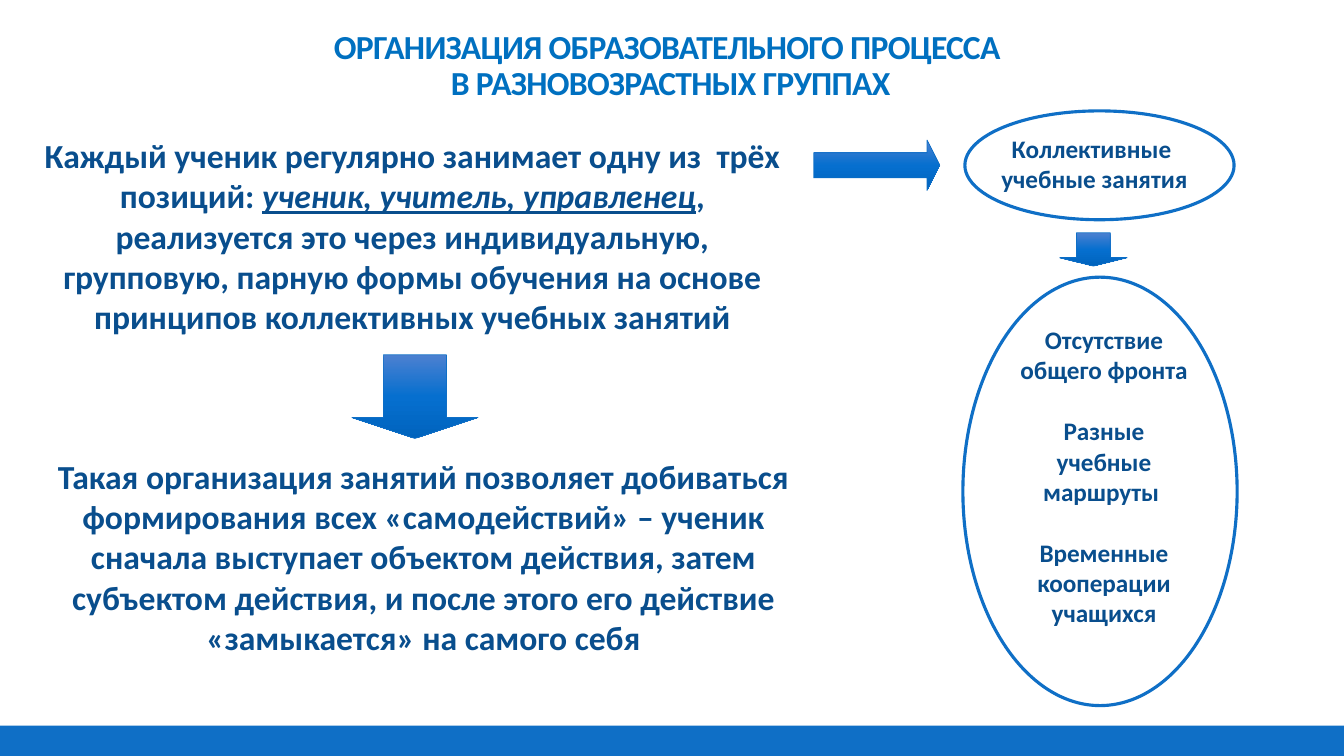
from copy import deepcopy
from dataclasses import dataclass

from pptx import Presentation
from pptx.dml.color import RGBColor
from pptx.enum import shapes, text
from pptx.oxml.ns import qn
from pptx.util import Inches, Pt


@dataclass(frozen=True)
class Theme:
    font: str = "Calibri"
    title: RGBColor = RGBColor(0x00, 0x70, 0xC0)
    body: RGBColor = RGBColor(0x09, 0x4E, 0x8D)
    accent: RGBColor = RGBColor(0x0F, 0x6F, 0xC6)
    white: RGBColor = RGBColor(0xFF, 0xFF, 0xFF)
    arrow_stops: tuple = (
        (0, RGBColor(0x4C, 0x80, 0xD0)),
        (0.5, RGBColor(0x06, 0x6F, 0xCF)),
        (1, RGBColor(0x00, 0x63, 0xBD)),
    )
    large: int = 24
    small: int = 18
    paragraph_gap: int = 22


THEME = Theme()
SHAPE = shapes.MSO_SHAPE


def add_run(paragraph, words, size, color, emphasis=False):
    run = paragraph.add_run()
    run.text = words
    font = run.font
    font.name, font.size, font.bold = THEME.font, Pt(size), True
    font.color.rgb = color
    if emphasis:
        font.italic = font.underline = True
    return run


def add_text(slide, box, paragraphs, size, wrap=True):
    """Add centred text; each paragraph is a list of (words, emphasis) runs."""
    frame = slide.shapes.add_textbox(*map(Inches, box)).text_frame
    frame.word_wrap = wrap
    for index, runs in enumerate(paragraphs):
        paragraph = frame.add_paragraph() if index else frame.paragraphs[0]
        paragraph.alignment = text.PP_ALIGN.CENTER
        if index:
            paragraph.space_before = Pt(THEME.paragraph_gap)
        for words, emphasis in runs:
            if words == "\n":
                paragraph.add_line_break()
            else:
                add_run(paragraph, words, size, THEME.body, emphasis)


def add_outlined_shape(slide, kind, box, line_width):
    shape = slide.shapes.add_shape(kind, *map(Inches, box))
    shape.shadow.inherit = False
    shape.line.color.rgb = THEME.accent
    shape.line.width = Pt(line_width)
    return shape


def add_arrow(slide, kind, box):
    arrow = add_outlined_shape(slide, kind, box, 0.5)
    arrow.adjustments[0], arrow.adjustments[1] = 0.5, 0.25
    arrow.fill.gradient()
    arrow.fill.gradient_angle = 270
    stop_list = arrow._element.spPr.find(".//" + qn("a:gsLst"))
    stop_list.insert(1, deepcopy(stop_list[0]))
    for stop, (position, color) in zip(arrow.fill.gradient_stops, THEME.arrow_stops):
        stop.position = position
        stop.color.rgb = color


def add_oval(slide, box, text_offset, text_size, paragraphs, wrap=True):
    """Add an outlined oval with a text box offset from its top left corner."""
    oval = add_outlined_shape(slide, SHAPE.OVAL, box, 2.25)
    oval.fill.solid()
    oval.fill.fore_color.rgb = THEME.white
    left, top = box[0] + text_offset[0], box[1] + text_offset[1]
    add_text(slide, (left, top, *text_size), paragraphs, THEME.small, wrap)


def add_footer_bar(slide, box):
    bar = add_outlined_shape(slide, SHAPE.RECTANGLE, box, 0)
    bar.fill.solid()
    bar.fill.fore_color.rgb = THEME.accent
    bar.line.fill.background()


def fill_title(slide, box, lines):
    title = slide.shapes.title
    title.left, title.top, title.width, title.height = map(Inches, box)
    frame = title.text_frame
    frame.auto_size = text.MSO_AUTO_SIZE.NONE
    frame.vertical_anchor = text.MSO_ANCHOR.BOTTOM
    paragraph = frame.paragraphs[0]
    paragraph.alignment = text.PP_ALIGN.CENTER
    paragraph.line_spacing = 0.9
    for index, line in enumerate(lines):
        if index:
            paragraph.add_line_break()
        run = add_run(paragraph, line, THEME.large, THEME.title)
        run.font._element.set("spc", "-50")


def add_statements(slide, box):
    """Stack the two main statements with an arrow between them."""
    left, top, width, height = box
    add_text(slide, (left + 0.03, top, 7.64, 2.12), [[
        ("Каждый ученик регулярно занимает одну из  трёх позиций: ", False),
        ("ученик, учитель, управленец", True),
        (", реализуется это через индивидуальную, групповую, парную формы "
         "обучения на основе принципов коллективных учебных занятий", False),
    ]], THEME.large)
    add_arrow(slide, SHAPE.DOWN_ARROW, (left + 3.25, top + 2.23, 1.25, 0.83))
    add_text(slide, (left, top + height - 2.12, width, 2.12), [[
        ("Такая организация занятий позволяет добиваться формирования всех "
         "«самодействий» – ученик сначала выступает объектом действия, затем "
         "субъектом действия, и после этого его действие «замыкается» на "
         "самого себя", False),
    ]], THEME.large)


def add_lesson_features(slide, box):
    """Stack the lesson oval above the oval of its features."""
    left, top, width, height = box
    add_oval(slide, (left + 0.02, top, 2.67, 1.08), (0.25, 0.17), (2.07, 0.71), [
        [("Коллективные ", False), ("\n", False), ("учебные занятия", False)],
    ], wrap=False)
    add_arrow(slide, SHAPE.DOWN_ARROW, (left + 0.96, top + 1.21, 0.67, 0.33))
    features = ("Отсутствие общего фронта", "Разные учебные маршруты ",
                "Временные кооперации учащихся")
    add_oval(slide, (left, top + 1.65, width, height - 1.65), (0.45, 0.42), (1.9, 3.4),
             [[(feature, False)] for feature in features])


def main():
    presentation = Presentation()
    presentation.slide_width, presentation.slide_height = Inches(13.33), Inches(7.5)
    slide = presentation.slides.add_slide(presentation.slide_layouts[5])
    add_footer_bar(slide, (0, 7.2, 13.33, 0.3))
    fill_title(slide, (1.65, 0.12, 10, 0.95),
               ("ОРГАНИЗАЦИЯ ОБРАЗОВАТЕЛЬНОГО ПРОЦЕССА ", "В РАЗНОВОЗРАСТНЫХ ГРУППАХ"))
    add_statements(slide, (0.24, 1.29, 7.92, 5.3))
    add_arrow(slide, SHAPE.RIGHT_ARROW, (8.07, 1.39, 1.25, 0.5))
    add_lesson_features(slide, (9.55, 1.1, 2.72, 5.9))
    presentation.save("out.pptx")


if __name__ == "__main__":
    main()
